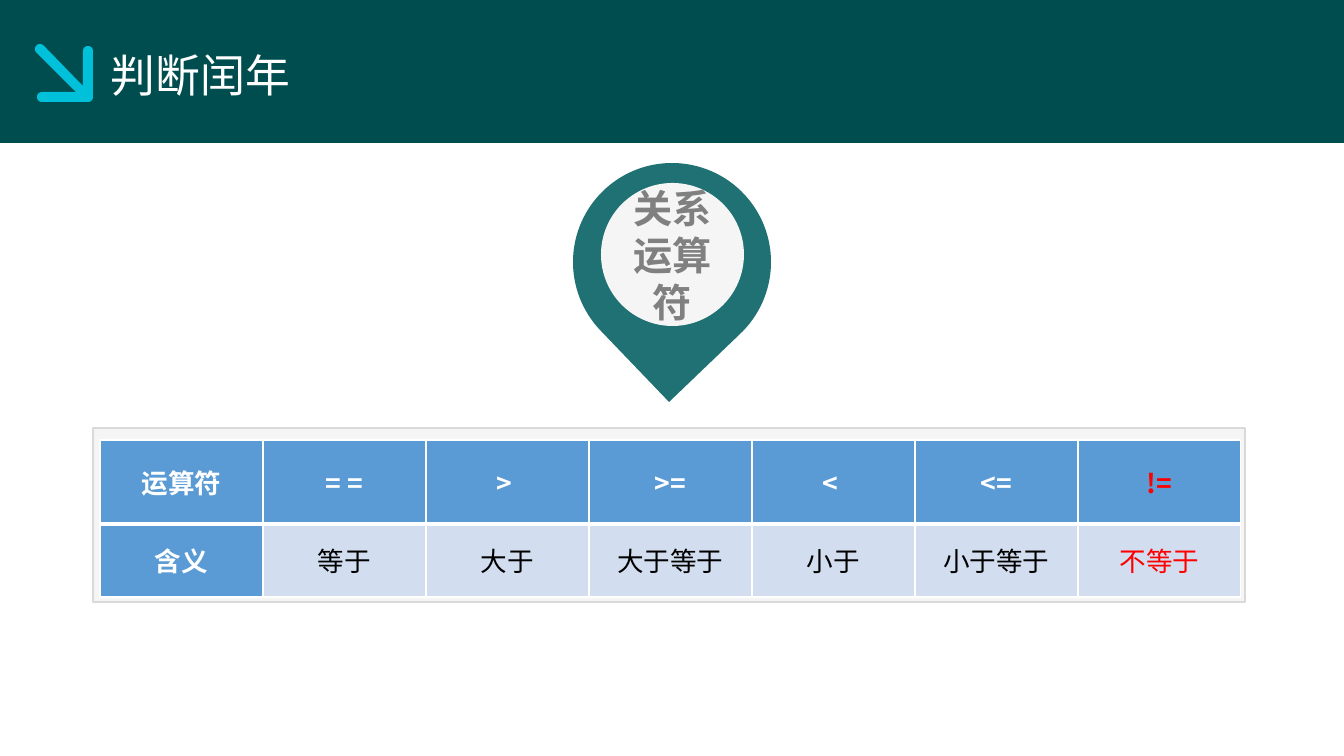
from math import cos, radians, sin

from lxml.etree import SubElement
from pptx import Presentation
from pptx.dml.color import RGBColor
from pptx.enum.shapes import MSO_SHAPE
from pptx.enum.text import MSO_ANCHOR, PP_ALIGN
from pptx.oxml.ns import qn
from pptx.util import Pt

TITLE = "判断闰年"
TOPIC = "关系运算符"
ROWS = [
    ["运算符", "= =", "> ", ">=", "< ", "<=", "!="],
    ["含义", "等于", "大于", "大于等于", "小于", "小于等于", "不等于"],
]

FONT = "Noto Sans CJK SC"
WHITE = RGBColor(0xFF, 0xFF, 0xFF)
BLACK = RGBColor(0x00, 0x00, 0x00)
RED = RGBColor(0xFF, 0x00, 0x00)
GRAY = RGBColor(0x80, 0x80, 0x80)
PALE = RGBColor(0xF5, 0xF5, 0xF5)
EDGE = RGBColor(0xD9, 0xD9, 0xD9)
DARK = RGBColor(0x00, 0x4D, 0x4F)
TEAL = RGBColor(0x1F, 0x71, 0x73)
CYAN = RGBColor(0x00, 0xC0, 0xDA)
BLUE = RGBColor(0x5B, 0x9B, 0xD5)
LIGHT = RGBColor(0xD2, 0xDE, 0xEF)

WIDTH, HEIGHT = 1344, 756
SCALE = 12192000 / WIDTH

# Table grid
LEFT, TOP, COL = 100, 440, 163
TALL = [84, 73]

# Arrow outline: corners (x, y) and round ends (x, y, first angle, last angle)
CAP = 5
ARROW = [
    (76, 92),
    (42, 97, 270, 90),
    (88, 97, 90, 0),
    (88, 51, 0, -180),
    (83, 86),
    (40, 49, -45, -225),
]


def px(n):
    return round(n * SCALE)


def write(frame, text, size, color, bold=False, align=PP_ALIGN.LEFT, space=None):
    para = frame.paragraphs[0]
    para.alignment = align
    if space:
        para.line_spacing = space
    run = para.add_run()
    run.text = text
    font = run.font
    font.size, font.bold, font.name = Pt(size), bold, FONT
    font.color.rgb = color
    SubElement(font._element, qn("a:ea"), typeface=FONT)


def paint(shape, fill, line=None):
    shape.shadow.inherit = False
    shape.fill.solid()
    shape.fill.fore_color.rgb = fill
    if line:
        shape.line.color.rgb = line
        shape.line.width = Pt(1)
    else:
        shape.line.fill.background()


def draw(slide, kind, box, fill, line=None):
    shape = slide.shapes.add_shape(kind, *map(px, box))
    paint(shape, fill, line)
    return shape


def trace(parts):
    """Turn corners and round ends into outline points in EMU."""
    dots = []
    for x, y, *turn in parts:
        if not turn:
            dots.append((px(x), px(y)))
            continue
        start, end = turn
        steps = abs(end - start) // 15
        for i in range(steps + 1):
            a = radians(start + (end - start) * i / steps)
            dots.append((px(x + CAP * cos(a)), px(y + CAP * sin(a))))
    return dots


def edge(cell, widths):
    """Draw white cell borders; widths maps each side tag to points."""
    props = cell._tc.get_or_add_tcPr()
    for i, (side, width) in enumerate(widths.items()):
        line = SubElement(props, qn("a:" + side), w=str(Pt(width)))
        fill = SubElement(line, qn("a:solidFill"))
        SubElement(fill, qn("a:srgbClr"), val=str(WHITE))
        props.insert(i, line)


def add_grid(slide):
    count = len(ROWS[0])
    frame = slide.shapes.add_table(
        len(ROWS), count, px(LEFT), px(TOP), px(COL * count), px(sum(TALL)))
    table = frame.table
    for col in table.columns:
        col.width = px(COL)
    for r, row in enumerate(ROWS):
        table.rows[r].height = px(TALL[r])
        for c, text in enumerate(row):
            cell = table.cell(r, c)
            head = r == 0 or c == 0
            color = RED if c == count - 1 else WHITE if head else BLACK
            cell.margin_left = cell.margin_right = px(14)
            cell.margin_top = cell.margin_bottom = 0
            cell.vertical_anchor = MSO_ANCHOR.MIDDLE
            cell.fill.solid()
            cell.fill.fore_color.rgb = BLUE if head else LIGHT
            write(cell.text_frame, text, 19, color, bold=head, align=PP_ALIGN.CENTER)
            thick = 3
            edge(cell, {"lnL": 1, "lnR": 1,
                        "lnT": thick if r else 1, "lnB": 1 if r else thick})


def main():
    deck = Presentation()
    deck.slide_width, deck.slide_height = px(WIDTH), px(HEIGHT)
    slide = deck.slides.add_slide(deck.slide_layouts[6])

    draw(slide, MSO_SHAPE.RECTANGLE, (0, 0, WIDTH, 143), DARK)
    dots = trace(ARROW)
    pen = slide.shapes.build_freeform(*dots[0], scale=1.0)
    pen.add_line_segments(dots[1:], close=True)
    paint(pen.convert_to_shape(), CYAN)
    title = slide.shapes.add_textbox(*map(px, (101, 43, 572, 65))).text_frame
    title.word_wrap = True
    write(title, TITLE, 32, WHITE)

    draw(slide, MSO_SHAPE.RECTANGLE, (93, 428, 1152, 174), PALE, EDGE)
    pin = draw(slide, MSO_SHAPE.TEAR, (573, 163, 198, 198), TEAL)
    pin.rotation = 136.2
    disc = draw(slide, MSO_SHAPE.OVAL, (601, 183, 143, 143), PALE)
    disc.text_frame.vertical_anchor = MSO_ANCHOR.MIDDLE
    write(disc.text_frame, TOPIC, 28, GRAY, bold=True, align=PP_ALIGN.CENTER)

    add_grid(slide)
    deck.save("out.pptx")


if __name__ == "__main__":
    main()
